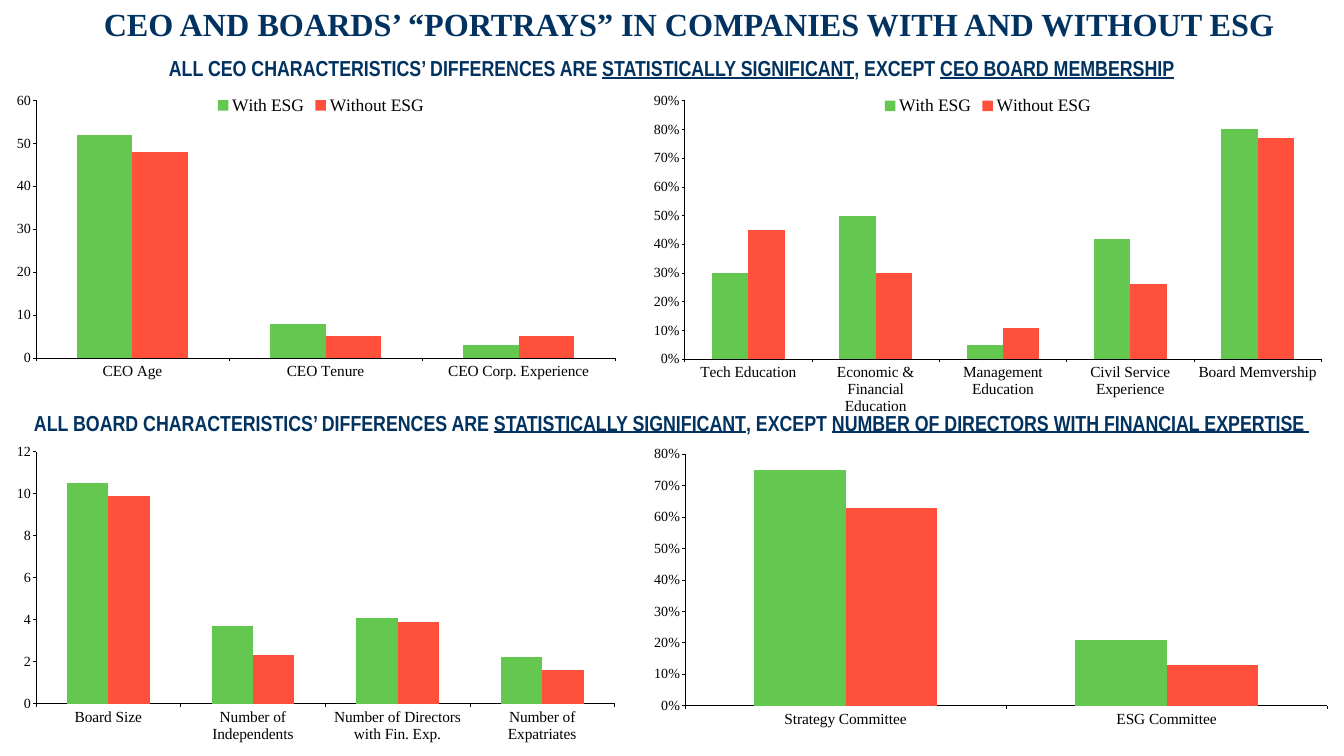
from lxml import etree
from pptx import Presentation
from pptx.chart.data import CategoryChartData as Data
from pptx.dml.color import RGBColor
from pptx.enum.chart import XL_CHART_TYPE as Kind, XL_LEGEND_POSITION as Spot, XL_TICK_MARK as Tick
from pptx.enum.text import MSO_ANCHOR as Anchor, PP_ALIGN as Align
from pptx.oxml.ns import qn
from pptx.util import Inches, Pt

NAVY, BLACK = "013260", "000000"
SERIES = {"With ESG": "64C850", "Without ESG": "FF503C"}
SERIF, NARROW = "Times New Roman", "Arial Narrow"


def color(code):
    return RGBColor.from_string(code)


def style(font, size, name, code, bold=False):
    font.size, font.name, font.bold = Pt(size), name, bold
    font.color.rgb = color(code)


def add_text(slide, box, runs, size, name, align, anchor):
    """Add one line of bold text; every second run is underlined."""
    frame = slide.shapes.add_textbox(*map(Inches, box)).text_frame
    frame.word_wrap = True
    frame.vertical_anchor = anchor
    frame.margin_left = frame.margin_right = Inches(0.08)
    frame.margin_top = frame.margin_bottom = Inches(0.08)
    para = frame.paragraphs[0]
    para.alignment = align
    style(para.font, size, name, NAVY, True)
    for i, text in enumerate(runs):
        run = para.add_run()
        run.text = text
        if i % 2:
            run.font.underline = True


def add_title(slide, box, text):
    add_text(slide, box, [text], 46, SERIF, Align.LEFT, Anchor.TOP)


def add_heading(slide, box, group, exception):
    runs = [f"ALL {group} CHARACTERISTICS’ DIFFERENCES ARE ",
            "STATISTICALLY SIGNIFICANT", ", EXCEPT ", exception]
    add_text(slide, box, runs, 31, NARROW, Align.CENTER, Anchor.MIDDLE)


def set_plot(chart, plot):
    """Fix the inner plot area as fractions of the chart: x, y, w, h."""
    area = chart.plots[0]._element.getparent()
    for old in area.findall(qn("c:layout")):
        area.remove(old)
    layout = etree.Element(qn("c:layout"))
    area.insert(0, layout)
    manual = etree.SubElement(layout, qn("c:manualLayout"))
    parts = [("layoutTarget", "inner"), ("xMode", "edge"), ("yMode", "edge")]
    parts += zip("xywh", plot)
    for tag, val in parts:
        etree.SubElement(manual, qn(f"c:{tag}")).set("val", str(val))


def set_axis(axis, size):
    axis.has_major_gridlines = False
    axis.major_tick_mark, axis.minor_tick_mark = Tick.OUTSIDE, Tick.NONE
    axis.format.line.color.rgb = color(BLACK)
    axis.format.line.width = Pt(0.75)
    style(axis.tick_labels.font, size, SERIF, BLACK)


def add_bars(slide, box, plot, rows, top, step, form="General", legend=False):
    data = Data(number_format=form)
    data.categories = list(rows)
    for name, vals in zip(SERIES, zip(*rows.values())):
        data.add_series(name, vals)
    chart = slide.shapes.add_chart(Kind.COLUMN_CLUSTERED, *map(Inches, box), data).chart
    style(chart.font, 10, NARROW, BLACK)
    chart.has_title = False
    chart.has_legend = legend
    if legend:
        chart.legend.position = Spot.TOP
        chart.legend.include_in_layout = False
        style(chart.legend.font, 25, SERIF, BLACK)

    bars = chart.plots[0]
    bars.gap_width, bars.overlap, bars.vary_by_categories = 150, 0, False
    for series, code in zip(bars.series, SERIES.values()):
        series.format.fill.solid()
        series.format.fill.fore_color.rgb = color(code)

    set_axis(chart.category_axis, 22)
    values = chart.value_axis
    set_axis(values, 20)
    values.minimum_scale, values.maximum_scale, values.major_unit = 0, top, step
    values.tick_labels.number_format = form
    values.tick_labels.number_format_is_linked = False
    set_plot(chart, plot)


def add_ceo(slide):
    add_heading(slide, (0, 1.01, 26.65, 0.68), "CEO", "CEO BOARD MEMBERSHIP")
    years = {"CEO Age": (52, 48), "CEO Tenure": (8, 5),
             "CEO Corp. Experience": (3, 5)}
    add_bars(slide, (0, 1.76, 12.73, 6.27), (0.056, 0.037, 0.903, 0.815),
             years, 60, 10, legend=True)
    shares = {"Tech Education": (0.3, 0.45),
              "Economic & Financial Education": (0.5, 0.3),
              "Management Education": (0.05, 0.11),
              "Civil Service Experience": (0.42, 0.26),
              "Board Memvership": (0.8, 0.77)}
    add_bars(slide, (12.56, 1.77, 14.08, 6.72), (0.073, 0.034, 0.897, 0.763),
             shares, 0.9, 0.1, "0%", legend=True)


def add_board(slide):
    add_heading(slide, (0, 8.04, 26.65, 0.68), "BOARD",
                "NUMBER OF DIRECTORS WITH FINANCIAL EXPERTISE ")
    counts = {"Board Size": (10.5, 9.9), "Number of Independents": (3.7, 2.3),
              "Number of Directors with Fin. Exp.": (4.1, 3.9),
              "Number of Expatriates": (2.2, 1.6)}
    add_bars(slide, (0, 8.71, 12.73, 6.29), (0.056, 0.04, 0.902, 0.795),
             counts, 12, 2)
    shares = {"Strategy Committee": (0.75, 0.63), "ESG Committee": (0.21, 0.13)}
    add_bars(slide, (12.73, 8.71, 13.94, 6.29), (0.062, 0.048, 0.914, 0.793),
             shares, 0.8, 0.1, "0%")


def main():
    deck = Presentation()
    deck.slide_width, deck.slide_height = Inches(26.67), Inches(15)
    slide = deck.slides.add_slide(deck.slide_layouts[6])
    add_title(slide, (1.98, 0, 24.67, 0.92),
              "CEO AND BOARDS’ “PORTRAYS” IN COMPANIES WITH AND WITHOUT ESG")
    add_ceo(slide)
    add_board(slide)
    deck.save("out.pptx")


if __name__ == "__main__":
    main()
